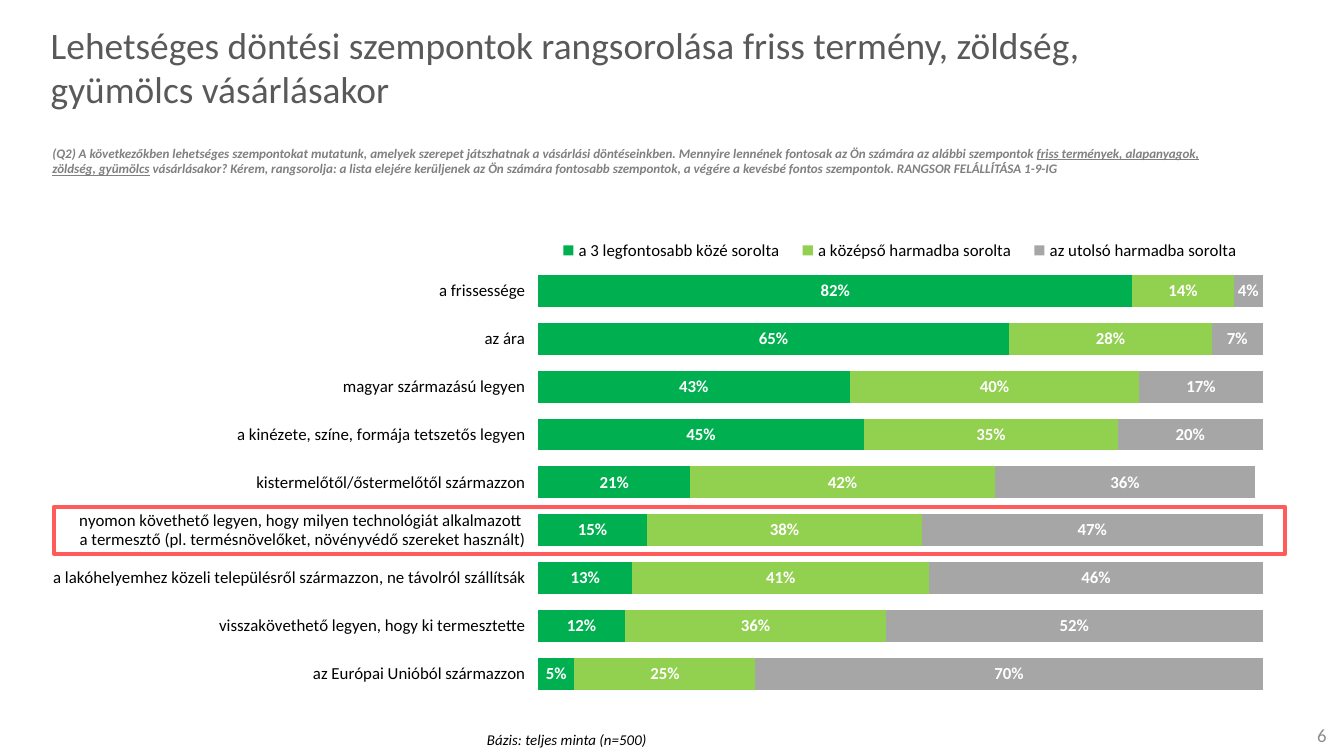
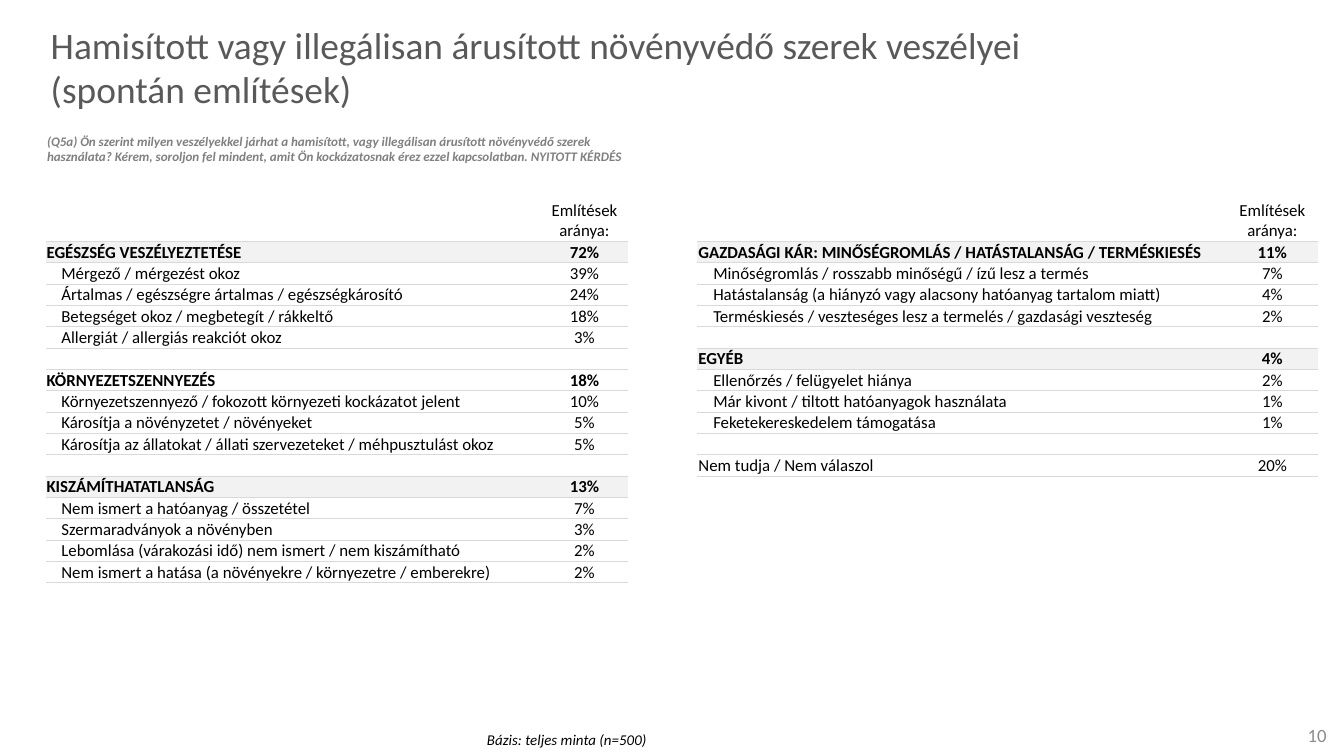
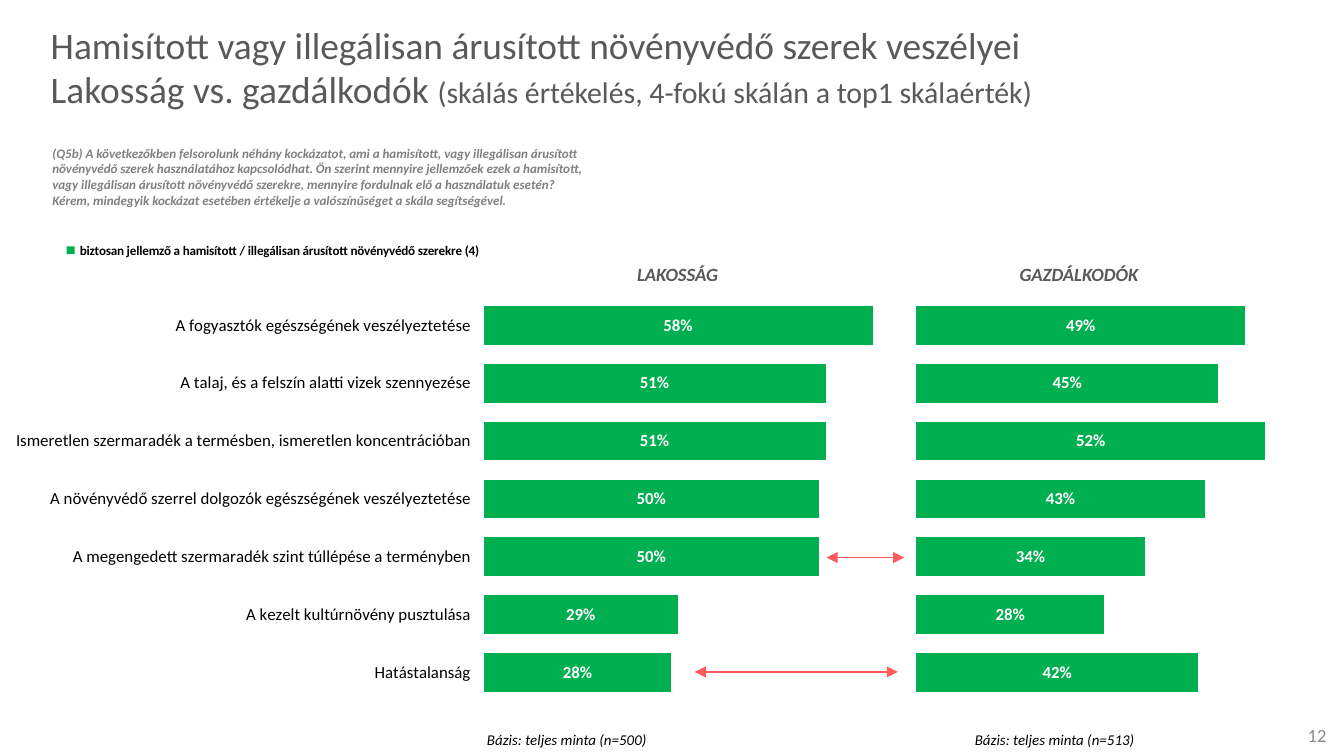
from lxml.etree import SubElement
from pptx import Presentation
from pptx.chart.data import CategoryChartData
from pptx.dml.color import RGBColor
from pptx.enum.chart import XL_CHART_TYPE as ChartType, XL_LEGEND_POSITION as LegendPosition
from pptx.enum.shapes import MSO_CONNECTOR as Connector, MSO_SHAPE as Shape
from pptx.enum.text import MSO_ANCHOR as Anchor, PP_ALIGN as Align
from pptx.oxml import parse_xml
from pptx.oxml.ns import nsdecls, qn
from pptx.util import Cm, Pt

FONT = "Calibri"
GREEN, LIME, SILVER = "00B050", "92D050", "A6A6A6"
RED, BLACK, WHITE = "FF5B5B", "000000", "FFFFFF"
TITLE_GREY, NOTE_GREY, PAGE_GREY = "595959", "808080", "8C8C8C"
RULE_GREY, BAND_GREY = "D9D9D9", "F2F2F2"
NO_STYLE = "{2D5ABB26-0587-4C30-8999-92F81FD0307C}"

# ---- Content: ranking of purchase criteria
RANK_TITLE = [["Lehetséges döntési szempontok rangsorolása friss termény, zöldség, "
               "gyümölcs vásárlásakor"]]
RANK_QUESTION = [[
    "(Q2) A következőkben lehetséges szempontokat mutatunk, amelyek szerepet játszhatnak "
    "a vásárlási döntéseinkben. Mennyire lennének fontosak az Ön számára az alábbi szempontok ",
    ("friss termények, alapanyagok, zöldség, gyümölcs", {"underline": True}),
    " vásárlásakor? Kérem, rangsorolja: a lista elejére kerüljenek az Ön számára fontosabb "
    "szempontok, a végére a kevésbé fontos szempontok. RANGSOR FELÁLLÍTÁSA 1-9-IG"]]
CRITERIA = [
    "a frissessége",
    "az ára",
    "magyar származású legyen",
    "a kinézete, színe, formája tetszetős legyen",
    "kistermelőtől/őstermelőtől származzon",
    "nyomon követhető legyen, hogy milyen technológiát alkalmazott \n"
    "a termesztő (pl. termésnövelőket, növényvédő szereket használt)",
    "a lakóhelyemhez közeli településről származzon, ne távolról szállítsák",
    "visszakövethető legyen, hogy ki termesztette",
    "az Európai Unióból származzon"]
RANK_SERIES = [
    ("a 3 legfontosabb közé sorolta", GREEN, [82, 65, 43, 45, 21, 15, 13, 12, 5]),
    ("a középső harmadba sorolta", LIME, [14, 28, 40, 35, 42, 38, 41, 36, 25]),
    ("az utolsó harmadba sorolta", SILVER, [4, 7, 17, 20, 36, 47, 46, 52, 70])]

# ---- Content: spontaneous mentions, as (kind, label, share) rows
DANGER = "Hamisított vagy illegálisan árusított növényvédő szerek veszélyei"
MENTION_TITLE = [[DANGER], ["(spontán említések)"]]
MENTION_QUESTION = [[
    "(Q5a) Ön szerint milyen veszélyekkel járhat a hamisított, vagy illegálisan árusított "
    "növényvédő szerek használata? Kérem, soroljon fel mindent, amit Ön kockázatosnak érez "
    "ezzel kapcsolatban. NYITOTT KÉRDÉS"]]
HEADER = ("plain", "", "Említések aránya:")
GAP = ("plain", "", "")
LEFT_MENTIONS = [
    HEADER,
    ("band", "EGÉSZSÉG VESZÉLYEZTETÉSE", "72%"),
    ("item", "Mérgező / mérgezést okoz", "39%"),
    ("item", "Ártalmas / egészségre ártalmas / egészségkárosító", "24%"),
    ("item", "Betegséget okoz / megbetegít / rákkeltő", "18%"),
    ("item", "Allergiát / allergiás reakciót okoz", "3%"),
    GAP,
    ("bold", "KÖRNYEZETSZENNYEZÉS", "18%"),
    ("item", "Környezetszennyező / fokozott környezeti kockázatot jelent", "10%"),
    ("item", "Károsítja a növényzetet / növényeket", "5%"),
    ("item", "Károsítja az állatokat / állati szervezeteket / méhpusztulást okoz", "5%"),
    GAP,
    ("band", "KISZÁMÍTHATATLANSÁG", "13%"),
    ("item", "Nem ismert a hatóanyag / összetétel", "7%"),
    ("item", "Szermaradványok a növényben", "3%"),
    ("item", "Lebomlása (várakozási idő) nem ismert / nem kiszámítható", "2%"),
    ("item", "Nem ismert a hatása (a növényekre / környezetre / emberekre)", "2%")]
RIGHT_MENTIONS = [
    HEADER,
    ("band", "GAZDASÁGI KÁR: MINŐSÉGROMLÁS / HATÁSTALANSÁG / TERMÉSKIESÉS", "11%"),
    ("item", "Minőségromlás / rosszabb minőségű / ízű lesz a termés", "7%"),
    ("item", "Hatástalanság (a hiányzó vagy alacsony hatóanyag tartalom miatt)", "4%"),
    ("item", "Terméskiesés / veszteséges lesz a termelés / gazdasági veszteség", "2%"),
    GAP,
    ("band", "EGYÉB", "4%"),
    ("item", "Ellenőrzés / felügyelet hiánya", "2%"),
    ("item", "Már kivont / tiltott hatóanyagok használata", "1%"),
    ("item", "Feketekereskedelem támogatása", "1%"),
    GAP,
    ("plain", "Nem tudja / Nem válaszol", "20%")]

# ---- Content: residents against farmers
RISK_TITLE = [[DANGER], ["Lakosság vs. gazdálkodók ",
                         ("(skálás értékelés, 4-fokú skálán a top1 skálaérték)", {"size": 16})]]
RISK_QUESTION = [[
    "(Q5b) A következőkben felsorolunk néhány kockázatot, ami a hamisított, vagy illegálisan "
    "árusított növényvédő szerek használatához kapcsolódhat. Ön szerint mennyire jellemzőek ezek "
    "a hamisított, vagy illegálisan árusított növényvédő szerekre, mennyire fordulnak elő a "
    "használatuk esetén? Kérem, mindegyik kockázat esetében értékelje a valószínűséget a skála "
    "segítségével."]]
RISKS = [
    "A fogyasztók egészségének veszélyeztetése",
    "A talaj, és a felszín alatti vizek szennyezése",
    "Ismeretlen szermaradék a termésben, ismeretlen koncentrációban",
    "A növényvédő szerrel dolgozók egészségének veszélyeztetése",
    "A megengedett szermaradék szint túllépése a terményben",
    "A kezelt kultúrnövény pusztulása",
    "Hatástalanság"]
RISK_SERIES = "biztosan jellemző a hamisított / illegálisan árusított növényvédő szerekre (4)"
RESIDENTS = [58, 51, 51, 50, 50, 29, 28]
FARMERS = [49, 45, 52, 42, 34, 28, 42]
FARMERS[3] = 43
GROUP_HEADS = [("LAKOSSÁG", 11.79, 2.08), ("GAZDÁLKODÓK", 19.02, 2.79)]
GAP_ARROWS = [(13.13, 16.97, 12.7), (15.62, 17.09, 10.54)]  # from x, to x, y


# ---- Helpers
def rgb(code):
    return RGBColor.from_string(code)


def set_font(font, size, color=BLACK, bold=False, italic=False, underline=None):
    font.name, font.size = FONT, Pt(size)
    font.bold, font.italic, font.underline = bold, italic, underline
    font.color.rgb = rgb(color)


def write(frame, lines, align=Align.LEFT, **style):
    """Each line is a list of spans: plain text or (text, style changes)."""
    for index, line in enumerate(lines):
        para = frame.paragraphs[0] if index == 0 else frame.add_paragraph()
        para.alignment = align
        for part in line:
            text, changes = (part, {}) if isinstance(part, str) else part
            span = para.add_run()
            span.text = text
            set_font(span.font, **{**style, **changes})


def add_text(page, place, lines, anchor=Anchor.TOP, wrap=True, **style):
    box = page.shapes.add_textbox(*map(Cm, place))
    box.text_frame.word_wrap = wrap
    box.text_frame.vertical_anchor = anchor
    write(box.text_frame, lines, **style)


def add_question(page, place, lines):
    add_text(page, place, lines, size=7, color=NOTE_GREY, bold=True, italic=True)


def add_base(page, count=500, left=8.15):
    add_text(page, (left, 13.69, 5.13, 0.61), [[f"Bázis: teljes minta (n={count})"]],
             align=Align.CENTER, size=8, italic=True)


def add_page(deck, number, title):
    page = deck.slides.add_slide(deck.slide_layouts[6])
    add_text(page, (24, 13.51, 1.32, 0.76), [[str(number)]], Anchor.MIDDLE,
             align=Align.RIGHT, size=10, color=PAGE_GREY)
    add_text(page, (0.71, 0.41, 22.5, 1.7), title, Anchor.MIDDLE, size=20, color=TITLE_GREY)
    add_base(page)
    return page


def set_layout(parent, position, area, inner=False):
    """Place a chart part by its share of the chart: x, y, width, height."""
    for old in parent.findall(qn("c:layout")):
        parent.remove(old)
    layout = parse_xml(f"<c:layout {nsdecls('c')}><c:manualLayout/></c:layout>")
    manual = layout[0]
    settings = [("layoutTarget", "inner")] if inner else []
    settings += [("xMode", "edge"), ("yMode", "edge"), *zip("xywh", area)]
    for name, value in settings:
        SubElement(manual, qn(f"c:{name}")).set("val", str(value))
    parent.insert(position, layout)


def add_bars(page, place, categories, series, plot_area, legend_area=None,
             legend_size=9, legend_bold=False, show_categories=True):
    data = CategoryChartData(number_format="0")
    data.categories = categories
    for name, _, values in series:
        data.add_series(name, values)
    chart = page.shapes.add_chart(ChartType.BAR_STACKED, *map(Cm, place), data).chart
    set_font(chart.font, 9)
    chart.has_title = False
    set_layout(chart._chartSpace.chart.plotArea, 0, plot_area, inner=True)

    # Axes
    chart.value_axis.minimum_scale, chart.value_axis.maximum_scale = 0, 100
    chart.value_axis.has_major_gridlines = False
    chart.value_axis.visible = False
    chart.category_axis.reverse_order = True
    chart.category_axis.format.line.fill.background()
    chart.category_axis.visible = show_categories
    set_font(chart.category_axis.tick_labels.font, 9)

    # Bars and their labels
    plot = chart.plots[0]
    plot.gap_width, plot.overlap, plot.vary_by_categories = 50, 100, False
    for bars, (_, color, _) in zip(plot.series, series):
        bars.format.fill.solid()
        bars.format.fill.fore_color.rgb = rgb(color)
        labels = bars.data_labels
        labels.show_value = True
        labels.number_format, labels.number_format_is_linked = '0"%"', False
        set_font(labels.font, 9, WHITE, bold=True)

    chart.has_legend = legend_area is not None
    if legend_area:
        chart.legend.position = LegendPosition.TOP
        chart.legend.include_in_layout = False
        set_font(chart.legend.font, legend_size, bold=legend_bold)
        set_layout(chart.legend._element, 1, legend_area)


def add_border(cell, side):
    line = SubElement(cell._tc.get_or_add_tcPr(), qn(f"a:{side}"), w=str(Pt(0.25)))
    fill = SubElement(line, qn("a:solidFill"))
    SubElement(fill, qn("a:srgbClr"), val=RULE_GREY)


def add_mentions(page, left, widths, rows):
    heights = [0.8] + [0.4] * (len(rows) - 1)
    table = page.shapes.add_table(len(rows), 2, Cm(left), Cm(3.76),
                                  Cm(sum(widths)), Cm(sum(heights))).table
    table.first_row = table.horz_banding = False
    table._tbl.tblPr.find(qn("a:tableStyleId")).text = NO_STYLE
    for column, width in zip(table.columns, widths):
        column.width = Cm(width)
    for index, (kind, *texts) in enumerate(rows):
        table.rows[index].height = Cm(heights[index])
        for cell, text, align in zip(table.rows[index].cells, texts, (Align.LEFT, Align.CENTER)):
            indent = kind == "item" and align == Align.LEFT
            cell.margin_left = Cm(0.3 if indent else 0.02)
            cell.margin_top = cell.margin_right = Cm(0.02)
            cell.margin_bottom = 0
            cell.vertical_anchor = Anchor.MIDDLE
            for side in ("lnT", "lnB") if index else ("lnB",):
                add_border(cell, side)
            if kind == "band":
                cell.fill.solid()
                cell.fill.fore_color.rgb = rgb(BAND_GREY)
            else:
                cell.fill.background()
            if text:
                write(cell.text_frame, [[text]], align, size=9, bold=kind in ("band", "bold"))
            else:
                SubElement(cell.text_frame.paragraphs[0]._p, qn("a:endParaRPr"), sz="900")


def add_highlight(page, place):
    frame = page.shapes.add_shape(Shape.RECTANGLE, *map(Cm, place))
    frame.shadow.inherit = False
    frame.fill.background()
    frame.line.color.rgb = rgb(RED)
    frame.line.width = Pt(2)


def add_arrow(page, start, end, y):
    arrow = page.shapes.add_connector(Connector.STRAIGHT, Cm(start), Cm(y), Cm(end), Cm(y))
    arrow.line.color.rgb = rgb(RED)
    arrow.line.width = Pt(0.75)
    for tip in ("headEnd", "tailEnd"):
        SubElement(arrow.line._get_or_add_ln(), qn(f"a:{tip}"), type="triangle")
    SubElement(arrow._element.spPr, qn("a:effectLst"))


# ---- Slides
def build_ranking(deck):
    page = add_page(deck, 6, RANK_TITLE)
    add_bars(page, (-2.92, 2.54, 27.33, 11.25), CRITERIA, RANK_SERIES,
             (0.479, 0.223, 0.501, 0.724), legend_area=(0.484, 0.16, 0.49, 0.07))
    add_highlight(page, (1.02, 9.58, 23.27, 0.89))
    add_question(page, (0.74, 2.62, 22.56, 0.86), RANK_QUESTION)


def build_mentions(deck):
    page = add_page(deck, 10, MENTION_TITLE)
    add_question(page, (0.64, 2.39, 11.86, 0.86), MENTION_QUESTION)
    add_mentions(page, 0.86, (9.37, 1.63), LEFT_MENTIONS)
    add_mentions(page, 13.18, (10, 1.73), RIGHT_MENTIONS)


def build_comparison(deck):
    page = add_page(deck, 12, RISK_TITLE)
    add_base(page, 513, 17.37)
    add_question(page, (0.74, 2.62, 10.59, 1.45), RISK_QUESTION)
    plot_area = (0.463, 0.223, 0.478, 0.724)
    add_bars(page, (-3.15, 3.25, 26.54, 10.57), RISKS, [(RISK_SERIES, GREEN, RESIDENTS)],
             plot_area, legend_area=(0.153, 0.11, 0.32, 0.06), legend_size=7, legend_bold=True)
    add_bars(page, (5.03, 3.25, 26.54, 10.57), RISKS, [(RISK_SERIES, GREEN, FARMERS)],
             plot_area, show_categories=False)
    for text, left, width in GROUP_HEADS:
        add_text(page, (left, 4.85, width, 0.69), [[text]], wrap=False,
                 size=10, color=TITLE_GREY, bold=True, italic=True)
    for arrow in GAP_ARROWS:
        add_arrow(page, *arrow)


def main():
    deck = Presentation()
    deck.slide_width, deck.slide_height = Cm(25.4), Cm(14.29)
    build_ranking(deck)
    build_mentions(deck)
    build_comparison(deck)
    deck.save("out.pptx")


if __name__ == "__main__":
    main()
